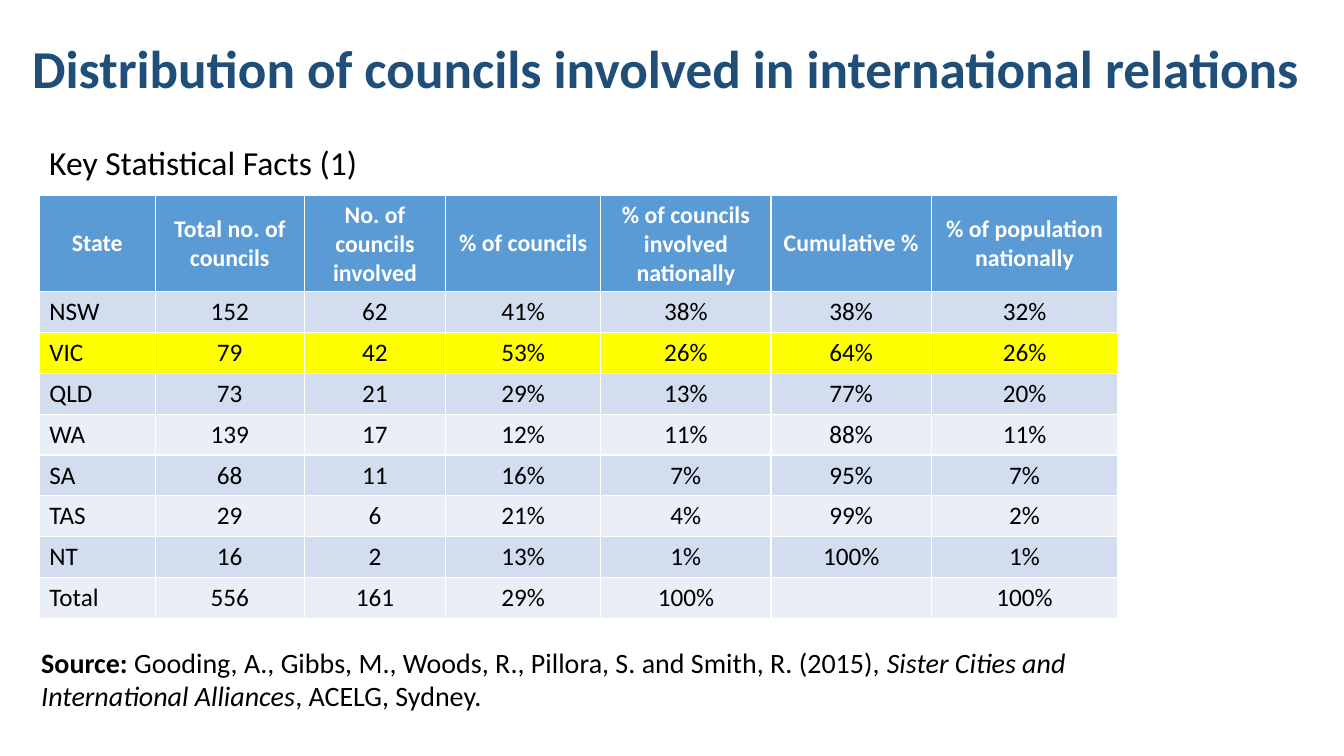
from pptx import Presentation
from pptx import util as u
from pptx.dml.color import RGBColor
from pptx.enum import text

FONT = "Calibri"
BLACK, WHITE, NAVY = "000000", "FFFFFF", "1F4E79"
HEADER_FILL, HIGHLIGHT = "5B9BD5", "FFFF00"
BANDS = ["D2DEEF", "EAEFF7"]
HIGHLIGHTED_STATE = "VIC"

# Each text box: left, top, width, height in cm, then its spans
TEXTS = [
    ((0.56, 0.76, 32.66, 1.88),
     [("Distribution of councils involved in international relations",
       {"size": 38, "color": NAVY, "bold": True})]),
    ((0.99, 3.45, 8.69, 1.27),
     [("Key Statistical Facts (1)", {"size": 24})]),
    ((0.79, 16.13, 27.41, 1.96),
     [("Source:", {"size": 20, "bold": True}),
      (" Gooding, A., Gibbs, M., Woods, R., Pillora, S. and Smith, R. (2015), ",
       {"size": 20}),
      ("Sister Cities and International Alliances", {"size": 20, "italic": True}),
      (", ACELG, Sydney.", {"size": 20})]),
]

# A line break in a heading starts a new paragraph
COLUMNS = [
    ("State", 2.92),
    ("Total no. of councils", 3.76),
    ("No. of councils involved", 3.56),
    ("% of councils", 3.91),
    ("% of councils\ninvolved nationally", 4.29),
    ("Cumulative %", 4.04),
    ("% of population\nnationally", 4.7),
]
STATES = [
    ("NSW", "152", "62", "41%", "38%", "38%", "32%"),
    ("VIC", "79", "42", "53%", "26%", "64%", "26%"),
    ("QLD", "73", "21", "29%", "13%", "77%", "20%"),
    ("WA", "139", "17", "12%", "11%", "88%", "11%"),
    ("SA", "68", "11", "16%", "7%", "95%", "7%"),
    ("TAS", "29", "6", "21%", "4%", "99%", "2%"),
    ("NT", "16", "2", "13%", "1%", "100%", "1%"),
    ("Total", "556", "161", "29%", "100%", "", "100%"),
]
TABLE_LEFT, TABLE_TOP = 0.99, 4.93
HEADER_HEIGHT, ROW_HEIGHT = 2.4, 1.03


def rgb(value):
    return RGBColor.from_string(value)


def add_span(para, words, size, color=BLACK, **styles):
    span = para.add_run()
    span.text = words
    span.font.color.rgb = rgb(color)
    for name, value in {"name": FONT, "size": u.Pt(size), "bold": False, **styles}.items():
        setattr(span.font, name, value)


def add_text(page, place, spans):
    frame = page.shapes.add_textbox(*map(u.Cm, place)).text_frame
    frame.word_wrap = True
    frame.auto_size = text.MSO_AUTO_SIZE.SHAPE_TO_FIT_TEXT
    for words, styles in spans:
        add_span(frame.paragraphs[0], words, **styles)


def fill_cell(cell, words, fill, centred, styles):
    cell.fill.solid()
    cell.fill.fore_color.rgb = rgb(fill)
    frame = cell.text_frame
    for number, line in enumerate(words.split("\n")):
        para = frame.add_paragraph() if number else frame.paragraphs[0]
        if centred:
            para.alignment = text.PP_ALIGN.CENTER
        if line:
            add_span(para, line, **styles)


def add_statistics(page):
    headings, widths = zip(*COLUMNS)
    heights = [HEADER_HEIGHT] + [ROW_HEIGHT] * len(STATES)
    place = (TABLE_LEFT, TABLE_TOP, sum(widths), sum(heights))
    table = page.shapes.add_table(len(heights), len(widths), *map(u.Cm, place)).table
    for column, width in zip(table.columns, widths):
        column.width = u.Cm(width)
    for row, height in zip(table.rows, heights):
        row.height = u.Cm(height)

    for cell, heading in zip(table.rows[0].cells, headings):
        cell.vertical_anchor = text.MSO_ANCHOR.MIDDLE
        fill_cell(cell, heading, HEADER_FILL, True,
                  {"size": 17, "color": WHITE, "bold": True})
    for r, values in enumerate(STATES):
        fill = HIGHLIGHT if values[0] == HIGHLIGHTED_STATE else BANDS[r % 2]
        for c, value in enumerate(values):
            fill_cell(table.cell(r + 1, c), value, fill, c > 0, {"size": 18})


def main():
    deck = Presentation()
    deck.slide_width, deck.slide_height = u.Cm(33.87), u.Cm(19.05)
    page = deck.slides.add_slide(deck.slide_layouts[6])
    for place, spans in TEXTS:
        add_text(page, place, spans)
    add_statistics(page)
    deck.save("out.pptx")


if __name__ == "__main__":
    main()
